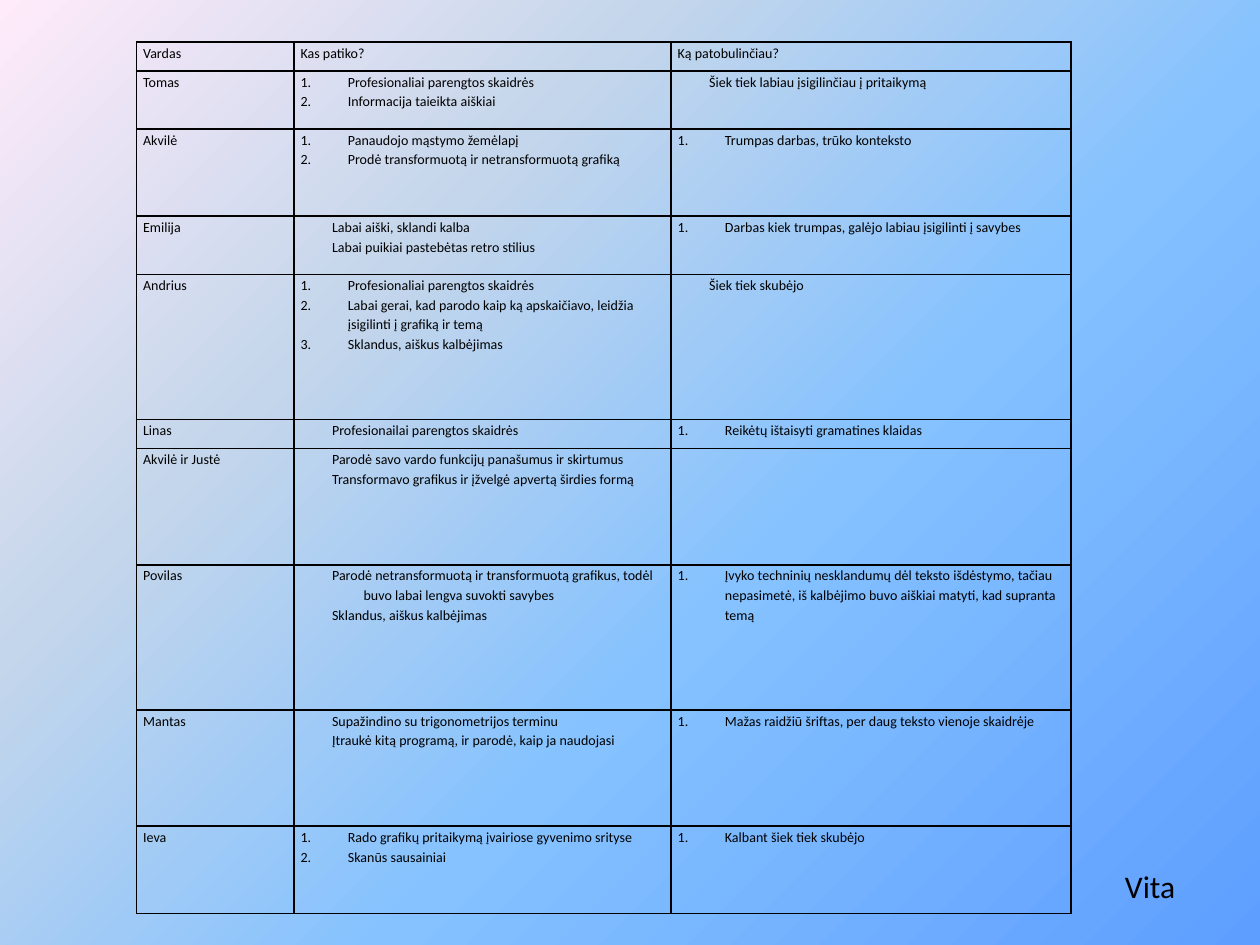
from lxml.etree import SubElement
from pptx import Presentation
from pptx.dml.color import RGBColor
from pptx.enum.text import MSO_AUTO_SIZE
from pptx.oxml.ns import qn
from pptx.util import Pt

BLACK = RGBColor(0x00, 0x00, 0x00)
BACKGROUND_STOPS = [
    (0, RGBColor(0x5E, 0x9E, 0xFF)),
    (40, RGBColor(0x85, 0xC2, 0xFF)),
    (70, RGBColor(0xC4, 0xD6, 0xEB)),
    (100, RGBColor(0xFF, 0xEB, 0xFA)),
]
FONT = "Calibri"
COLUMN_WIDTHS = [90, 215.5, 228.5]
ROW_UNIT = 16.6

# Paragraph styles: left margin, first-line indent, bullet tag
PLAIN = (0, 0, "a:buNone")
NUMBERED = (27, -27, "a:buAutoNum")
INDENTED = (36, -18, "a:buNone")

# Each row: height in units, name, then (style, lines) for likes and improvements
FEEDBACK = [
    (1, "Vardas", (PLAIN, ["Kas patiko?"]), (PLAIN, ["Ką patobulinčiau?"])),
    (2, "Tomas",
     (NUMBERED, ["Profesionaliai parengtos skaidrės", "Informacija taieikta aiškiai"]),
     (INDENTED, ["Šiek tiek labiau įsigilinčiau į pritaikymą"])),
    (3, "Akvilė",
     (NUMBERED, ["Panaudojo mąstymo žemėlapį",
                 "Prodė transformuotą ir netransformuotą grafiką"]),
     (NUMBERED, ["Trumpas darbas, trūko konteksto"])),
    (2, "Emilija",
     (INDENTED, ["Labai aiški, sklandi kalba", "Labai puikiai pastebėtas retro stilius"]),
     (NUMBERED, ["Darbas kiek trumpas, galėjo labiau įsigilinti į savybes"])),
    (5, "Andrius",
     (NUMBERED, ["Profesionaliai parengtos skaidrės",
                 "Labai gerai, kad parodo kaip ką apskaičiavo, leidžia įsigilinti "
                 "į grafiką ir temą",
                 "Sklandus, aiškus kalbėjimas"]),
     (INDENTED, ["Šiek tiek skubėjo"])),
    (1, "Linas",
     (INDENTED, ["Profesionailai parengtos skaidrės"]),
     (NUMBERED, ["Reikėtų ištaisyti gramatines klaidas"])),
    (4, "Akvilė ir Justė",
     (INDENTED, ["Parodė savo vardo funkcijų panašumus ir skirtumus",
                 "Transformavo grafikus ir įžvelgė apvertą širdies formą"]),
     (PLAIN, [])),
    (5, "Povilas",
     (INDENTED, ["Parodė netransformuotą ir transformuotą grafikus, todėl buvo labai "
                 "lengva suvokti savybes",
                 "Sklandus, aiškus kalbėjimas"]),
     (NUMBERED, ["Įvyko techninių nesklandumų dėl teksto išdėstymo, tačiau nepasimetė, "
                 "iš kalbėjimo buvo aiškiai matyti, kad supranta temą"])),
    (4, "Mantas",
     (INDENTED, ["Supažindino su trigonometrijos terminu",
                 "Įtraukė kitą programą, ir parodė, kaip ja naudojasi"]),
     (NUMBERED, ["Mažas raidžiū šriftas, per daug teksto vienoje skaidrėje"])),
    (3, "Ieva",
     (NUMBERED, ["Rado grafikų pritaikymą įvairiose gyvenimo srityse", "Skanūs sausainiai"]),
     (NUMBERED, ["Kalbant šiek tiek skubėjo"])),
]


def add_solid_colour(parent, colour):
    SubElement(SubElement(parent, qn("a:solidFill")), qn("a:srgbClr"), val=str(colour))


def paint_background(page):
    fill = page.background.fill
    fill.gradient()
    fill.gradient_angle = 135
    stops = next(page.element.iter(qn("a:gsLst")))
    for stop in list(stops):
        stops.remove(stop)
    for position, colour in BACKGROUND_STOPS:
        stop = SubElement(stops, qn("a:gs"), pos=str(position * 1000))
        SubElement(stop, qn("a:srgbClr"), val=str(colour))


def format_font(font, size):
    font.name = FONT
    font.size = Pt(size)
    font.color.rgb = BLACK


def fill_cell(cell, style, lines):
    cell.margin_left = cell.margin_right = Pt(3.75)
    cell.margin_top = cell.margin_bottom = 0
    # Borders come before the fill in the cell properties
    properties = cell._tc.get_or_add_tcPr()
    for side in ("a:lnL", "a:lnR", "a:lnT", "a:lnB"):
        add_solid_colour(SubElement(properties, qn(side), w=str(Pt(1))), BLACK)
    cell.fill.background()

    margin, indent, bullet = style
    cell.text_frame.text = "\n".join(lines)
    for para in cell.text_frame.paragraphs:
        para.line_spacing = 1.15
        format_font(para.font, 8)
        for span in para.runs:
            format_font(span.font, 8)
        layout = para._p.get_or_add_pPr()
        layout.set("marL", str(Pt(margin)))
        layout.set("indent", str(Pt(indent)))
        mark = layout.makeelement(qn(bullet))
        if style is NUMBERED:
            mark.set("type", "arabicPeriod")
        layout.find(qn("a:lnSpc")).addnext(mark)


def add_feedback_table(page, left, top):
    height = ROW_UNIT * sum(row[0] for row in FEEDBACK)
    table = page.shapes.add_table(
        len(FEEDBACK), len(COLUMN_WIDTHS),
        Pt(left), Pt(top), Pt(sum(COLUMN_WIDTHS)), Pt(height)).table
    table.first_row = table.horz_banding = False
    for column, width in zip(table.columns, COLUMN_WIDTHS):
        column.width = Pt(width)
    for row, (units, name, likes, improvements) in zip(table.rows, FEEDBACK):
        row.height = Pt(units * ROW_UNIT)
        for cell, content in zip(row.cells, [(PLAIN, [name]), likes, improvements]):
            fill_cell(cell, *content)


def add_signature(page, left, top, width, height):
    box = page.shapes.add_textbox(Pt(left), Pt(top), Pt(width), Pt(height))
    frame = box.text_frame
    frame.text = "Vita"
    frame.word_wrap = False
    frame.auto_size = MSO_AUTO_SIZE.SHAPE_TO_FIT_TEXT
    format_font(frame.paragraphs[0].runs[0].font, 18)


def main():
    deck = Presentation()
    deck.slide_width, deck.slide_height = Pt(720), Pt(540)
    page = deck.slides.add_slide(deck.slide_layouts[6])
    paint_background(page)
    add_feedback_table(page, 78, 24)
    add_signature(page, 635.75, 491.75, 44, 29)
    deck.save("out.pptx")


if __name__ == "__main__":
    main()
